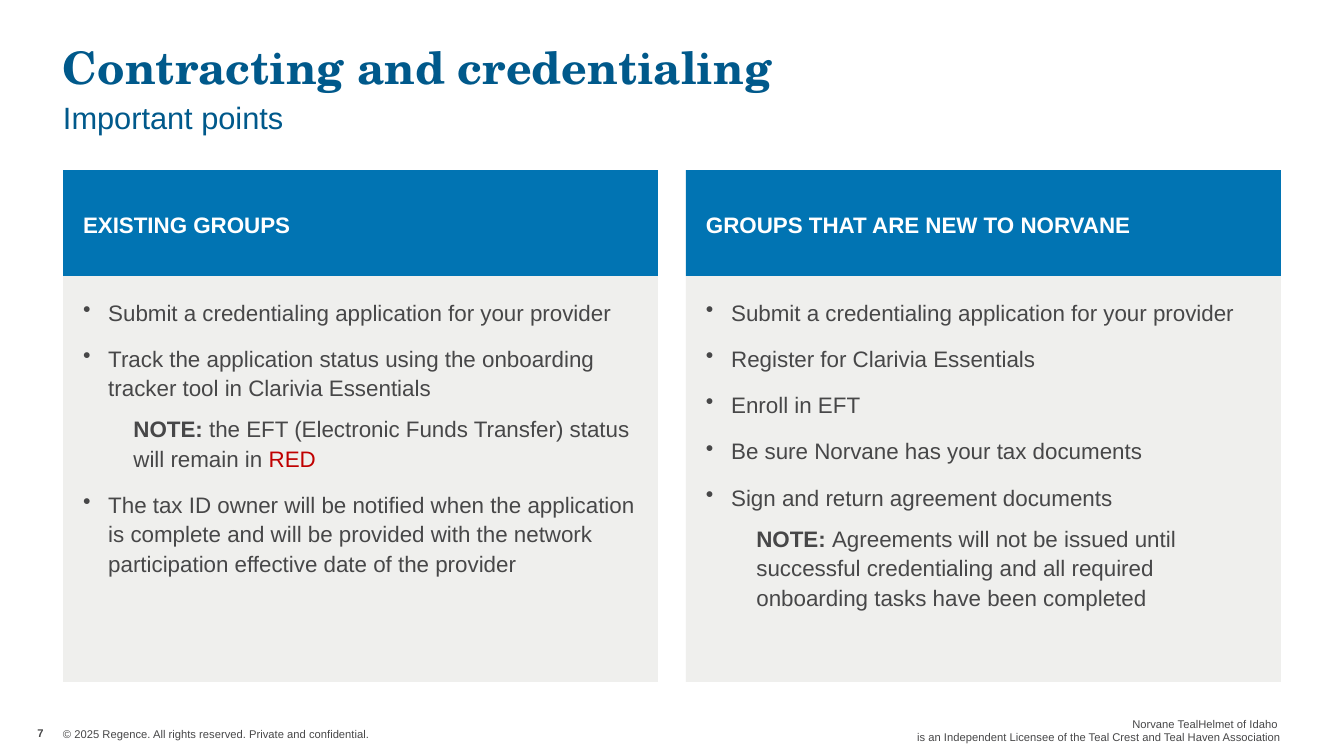
import pptx
import pptx.dml.color
import pptx.enum.shapes
import pptx.enum.text
import pptx.util
from lxml import etree

ALIGN = pptx.enum.text.PP_ALIGN
ANCHOR = pptx.enum.text.MSO_ANCHOR

COLORS = {
    "white": "FFFFFF",
    "header": "0174B3",
    "panel": "EFEFED",
    "title": "00598B",
    "text": "474748",
    "red": "C00000",
}

TITLE = "Contracting and credentialing"
SUBTITLE = "Important points"
PAGE_NUMBER = "7"
COPYRIGHT = "© 2025 Regence. All rights reserved. Private and confidential."
LICENSEE = [
    "Norvane TealHelmet of Idaho ",
    "is an Independent Licensee of the Teal Crest and Teal Haven Association",
]

# Each item is (kind, runs); each run is (text, bold, color name).
COLUMNS = [
    ("EXISTING GROUPS", [
        ("bullet", [("Submit a credentialing application for your provider", False, "text")]),
        ("bullet", [("Track the application status using the onboarding "
                     "tracker tool in Clarivia Essentials", False, "text")]),
        ("note", [("NOTE: ", True, "text"),
                  ("the EFT (Electronic Funds Transfer) status will remain in ", False, "text"),
                  ("RED", False, "red")]),
        ("bullet", [("The tax ID owner will be notified when the application is complete "
                     "and will be provided with the network participation effective date "
                     "of the provider", False, "text")]),
    ]),
    ("GROUPS THAT ARE NEW TO NORVANE", [
        ("bullet", [("Submit a credentialing application for your provider", False, "text")]),
        ("bullet", [("Register for Clarivia Essentials", False, "text")]),
        ("bullet", [("Enroll in EFT", False, "text")]),
        ("bullet", [("Be sure Norvane has your tax documents", False, "text")]),
        ("bullet", [("Sign and return agreement documents", False, "text")]),
        ("note", [("NOTE: ", True, "text"),
                  ("Agreements will not be issued until successful credentialing and all "
                   "required onboarding tasks have been completed", False, "text")]),
    ]),
]

# Left margin and first-line indent in inches, space before in points, outline level
ITEM_STYLES = {
    "plain": (0, 0, 0, 0),
    "bullet": (0.25, -0.25, 12, 0),
    "note": (0.5, 0, 8, 1),
}

PX_PER_INCH = 100.8
SLIDE_WIDTH, SLIDE_HEIGHT = 1344, 756
LEFT = 63
COLUMN_WIDTH, COLUMN_GAP = 595, 28
CONTENT_WIDTH = 2 * COLUMN_WIDTH + COLUMN_GAP
HEADER_TOP, HEADER_HEIGHT, PANEL_HEIGHT = 170, 106, 406
PADDING = 20


def px(length):
    return pptx.util.Inches(length / PX_PER_INCH)


def rgb(name):
    return pptx.dml.color.RGBColor.from_string(COLORS[name])


def plain(*lines, bold=False, color="text"):
    return [("plain", [(line, bold, color)]) for line in lines]


def add_text(page, items, at, size=16, font="Arial", fill=None, padding=0,
             anchor=ANCHOR.TOP, align=ALIGN.LEFT, line_spacing=1.0):
    """Add a text box, or a filled rectangle when fill is given."""
    area = [px(length) for length in at]
    if fill:
        box = page.shapes.add_shape(pptx.enum.shapes.MSO_SHAPE.RECTANGLE, *area)
        box.shadow.inherit = False
        box.fill.solid()
        box.fill.fore_color.rgb = rgb(fill)
        box.line.fill.background()
    else:
        box = page.shapes.add_textbox(*area)
    frame = box.text_frame
    frame.word_wrap = True
    frame.vertical_anchor = anchor
    frame.margin_left = frame.margin_right = px(padding)
    frame.margin_top = frame.margin_bottom = px(padding)

    for index, (kind, runs) in enumerate(items):
        margin, indent, space_before, level = ITEM_STYLES[kind]
        para = frame.paragraphs[0] if index == 0 else frame.add_paragraph()
        para.alignment = align
        para.level = level
        para.line_spacing = line_spacing
        para.space_before = pptx.util.Pt(space_before if index else 0)
        properties = para._p.get_or_add_pPr()
        properties.set("marL", str(pptx.util.Inches(margin)))
        properties.set("indent", str(pptx.util.Inches(indent)))
        if kind == "bullet":
            bullet = etree.SubElement(properties, pptx.oxml.ns.qn("a:buChar"))
            bullet.set("char", "•")
        for text, bold, color in runs:
            span = para.add_run()
            span.text = text
            span.font.name = font
            span.font.size = pptx.util.Pt(size)
            span.font.bold = bold
            span.font.color.rgb = rgb(color)


def main():
    deck = pptx.Presentation()
    deck.slide_width, deck.slide_height = px(SLIDE_WIDTH), px(SLIDE_HEIGHT)
    page = deck.slides.add_slide(deck.slide_layouts[6])

    add_text(page, plain(TITLE, bold=True, color="title"), (LEFT, 46, CONTENT_WIDTH, 47),
             size=32, font="TeX Gyre Schola", line_spacing=0.9)
    add_text(page, plain(SUBTITLE, color="title"), (LEFT, 95, CONTENT_WIDTH, 73),
             size=22, line_spacing=1.1)

    for index, (heading, items) in enumerate(COLUMNS):
        left = LEFT + index * (COLUMN_WIDTH + COLUMN_GAP)
        add_text(page, plain(heading, bold=True, color="white"),
                 (left, HEADER_TOP, COLUMN_WIDTH, HEADER_HEIGHT),
                 fill="header", padding=PADDING, anchor=ANCHOR.MIDDLE, line_spacing=1.1)
        add_text(page, items, (left, HEADER_TOP + HEADER_HEIGHT, COLUMN_WIDTH, PANEL_HEIGHT),
                 fill="panel", padding=PADDING, line_spacing=1.1)

    add_text(page, plain(PAGE_NUMBER, bold=True), (18, 713, 45, 40), size=8,
             anchor=ANCHOR.MIDDLE, align=ALIGN.CENTER)
    add_text(page, plain(COPYRIGHT), (LEFT, 727, 354, 13), size=8)
    add_text(page, plain(*LICENSEE), (800, 718, 481, 25), size=8,
             anchor=ANCHOR.MIDDLE, align=ALIGN.RIGHT)

    deck.save("out.pptx")


if __name__ == "__main__":
    main()
